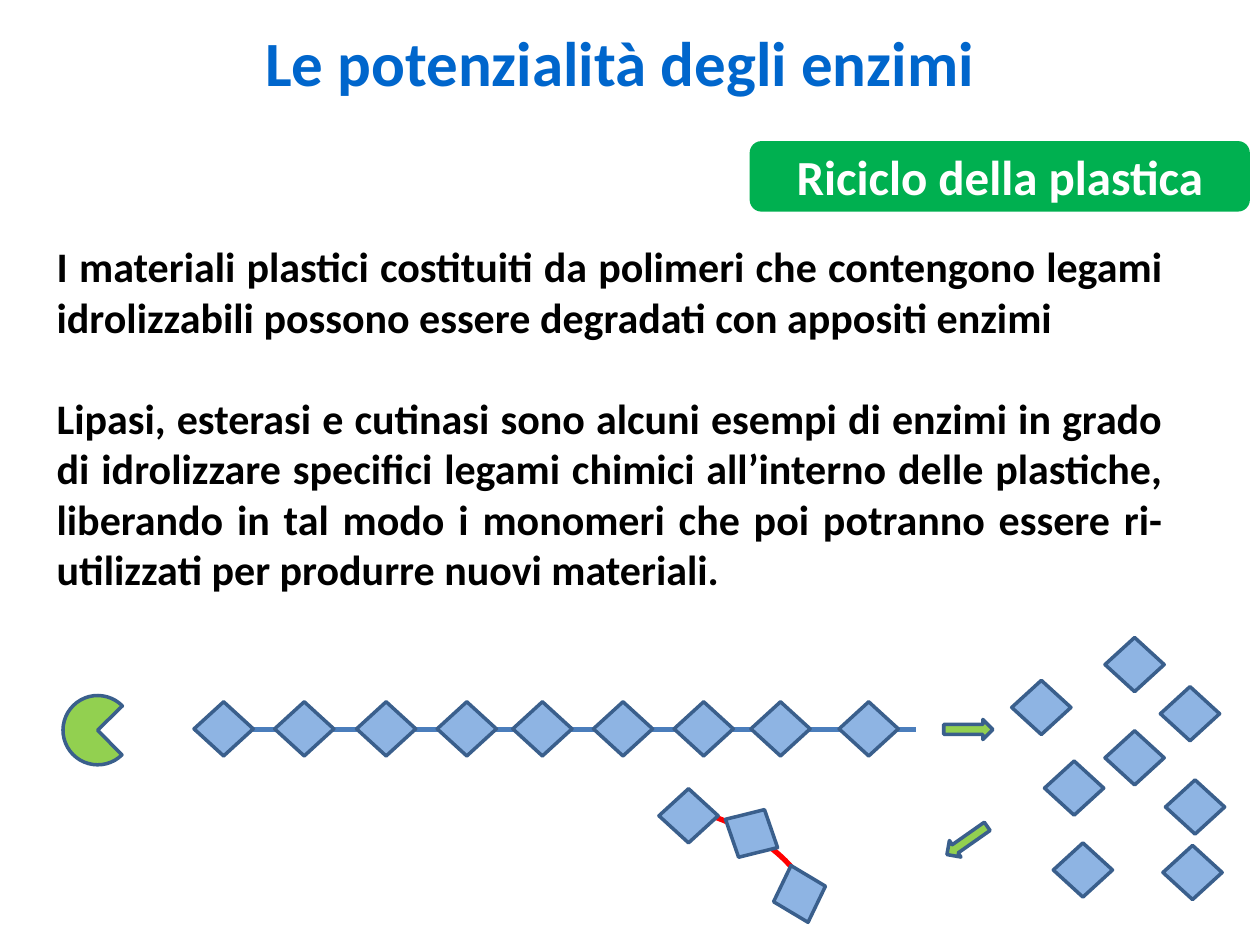
from lxml import etree
from pptx import Presentation
from pptx.dml.color import RGBColor
from pptx.enum.shapes import MSO_CONNECTOR, MSO_SHAPE
from pptx.enum.text import MSO_ANCHOR, MSO_AUTO_SIZE, PP_ALIGN
from pptx.oxml.ns import qn
from pptx.util import Inches, Pt

DIAMOND = MSO_SHAPE.DIAMOND
ARROW = MSO_SHAPE.RIGHT_ARROW
PIE = MSO_SHAPE.PIE
ARC = MSO_SHAPE.ARC
ROUNDED = MSO_SHAPE.ROUNDED_RECTANGLE
STRAIGHT = MSO_CONNECTOR.STRAIGHT
CENTER, JUSTIFY = PP_ALIGN.CENTER, PP_ALIGN.JUSTIFY

FONT = "Calibri"
COLORS = {
    "title": "0066CC", "text": "000000", "white": "FFFFFF",
    "label": "00B050", "enzyme": "92D050", "monomer": "8EB4E3",
    "outline": "3A5F8C", "chain": "4B7EBC", "bond": "FF0000",
}
MONOMER_SIZE = (0.47, 0.43)
ARROW_SIZE = (0.39, 0.16)

BODY = [
    "I materiali plastici costituiti da polimeri che contengono legami "
    "idrolizzabili possono essere degradati con appositi enzimi",
    "Lipasi, esterasi e cutinasi sono alcuni esempi di enzimi in grado di "
    "idrolizzare specifici legami chimici all’interno delle plastiche, "
    "liberando in tal modo i monomeri che poi potranno essere "
    "ri-utilizzati per produrre nuovi materiali.",
]
CHAIN_TOP = 5.57
CHAIN_LEFTS = [1.54, 2.18, 2.83, 3.47, 4.07, 4.71, 5.35, 5.96, 6.66]
FREE_MONOMERS = [(8.77, 5.06), (9.21, 5.45), (8.03, 5.4), (9.25, 6.19),
                 (8.29, 6.04), (9.23, 6.71), (8.77, 5.8), (8.36, 6.69)]
# Left, top, rotation
NEW_CHAIN = [(5.73, 6.4, 28.5), (5.23, 6.26, 0), (6.11, 6.88, 73.3)]


def rgb(name):
    return RGBColor.from_string(COLORS[name])


def place(shape, left, top, width, height):
    shape.left, shape.top = Inches(left), Inches(top)
    shape.width, shape.height = Inches(width), Inches(height)


def format_paragraph(paragraph, size, color, align):
    paragraph.alignment = align
    paragraph.space_before = Pt(0)
    for run in paragraph.runs:
        run.font.name = FONT
        run.font.size = Pt(size)
        run.font.bold = True
        run.font.color.rgb = rgb(color)


def add_title(slide, text):
    title = slide.shapes.title
    place(title, 0.78, 0.13, 8.28, 0.71)
    title.text_frame.text = text
    title.text_frame.auto_size = MSO_AUTO_SIZE.NONE
    format_paragraph(title.text_frame.paragraphs[0], 36, "title", CENTER)


def add_body(slide, texts):
    body = slide.placeholders[1]
    place(body, 0.35, 1.86, 8.98, 3.33)
    frame = body.text_frame
    frame.text = "\n".join(texts)
    frame.auto_size = MSO_AUTO_SIZE.NONE
    frame.vertical_anchor = MSO_ANCHOR.TOP
    for index, paragraph in enumerate(frame.paragraphs):
        format_paragraph(paragraph, 24, "text", JUSTIFY)
        paragraph.space_before = Pt(29 if index else 0)
        # Plain paragraphs without bullet or indent
        properties = paragraph._p.get_or_add_pPr()
        properties.set("marL", "0")
        properties.set("indent", "0")
        etree.SubElement(properties, qn("a:buNone"))


def add_figure(slide, kind, left, top, size, fill, line="outline",
               weight=2, rotation=0):
    figure = slide.shapes.add_shape(
        kind, Inches(left), Inches(top), Inches(size[0]), Inches(size[1]))
    figure.shadow.inherit = False
    figure.rotation = rotation
    if fill:
        figure.fill.solid()
        figure.fill.fore_color.rgb = rgb(fill)
    else:
        figure.fill.background()
    if line:
        figure.line.color.rgb = rgb(line)
        figure.line.width = Pt(weight)
    else:
        figure.line.fill.background()
    return figure


def add_monomer(slide, left, top, rotation=0):
    add_figure(slide, DIAMOND, left, top, MONOMER_SIZE, "monomer",
               rotation=rotation)


def add_label(slide, text):
    label = add_figure(slide, ROUNDED, 5.95, 1.12, (3.97, 0.56), "label",
                       line=None)
    frame = label.text_frame
    frame.text = text
    frame.vertical_anchor = MSO_ANCHOR.MIDDLE
    format_paragraph(frame.paragraphs[0], 28, "white", CENTER)


def add_polymer(slide):
    backbone = slide.shapes.add_connector(
        STRAIGHT, Inches(1.54), Inches(5.79), Inches(7.27), Inches(5.79))
    backbone.line.color.rgb = rgb("chain")
    backbone.line.width = Pt(3)
    etree.SubElement(backbone._element.spPr, qn("a:effectLst"))
    for left in CHAIN_LEFTS:
        add_monomer(slide, left, CHAIN_TOP)


def add_new_chain(slide):
    bond = add_figure(slide, ARC, 5.13, 6.57, (1.34, 0.54), None,
                      line="bond", weight=3, rotation=30)
    bond.adjustments[0] = 109.94
    bond.adjustments[1] = 4.85
    for left, top, rotation in NEW_CHAIN:
        add_monomer(slide, left, top, rotation)


def main():
    prs = Presentation()
    prs.slide_width, prs.slide_height = Inches(10), Inches(7.5)
    slide = prs.slides.add_slide(prs.slide_layouts[1])

    # Texts
    add_title(slide, "Le potenzialità degli enzimi")
    add_label(slide, "Riciclo della plastica")
    add_body(slide, BODY)

    # Enzyme and polymer
    add_polymer(slide)
    add_figure(slide, PIE, 0.5, 5.52, (0.55, 0.55), "enzyme", rotation=45.5)

    # Released monomers
    add_figure(slide, ARROW, 7.49, 5.71, ARROW_SIZE, "enzyme")
    for left, top in FREE_MONOMERS:
        add_monomer(slide, left, top)

    # New material
    add_figure(slide, ARROW, 7.48, 6.59, ARROW_SIZE, "enzyme", rotation=144.9)
    add_new_chain(slide)

    prs.save("out.pptx")


if __name__ == "__main__":
    main()
